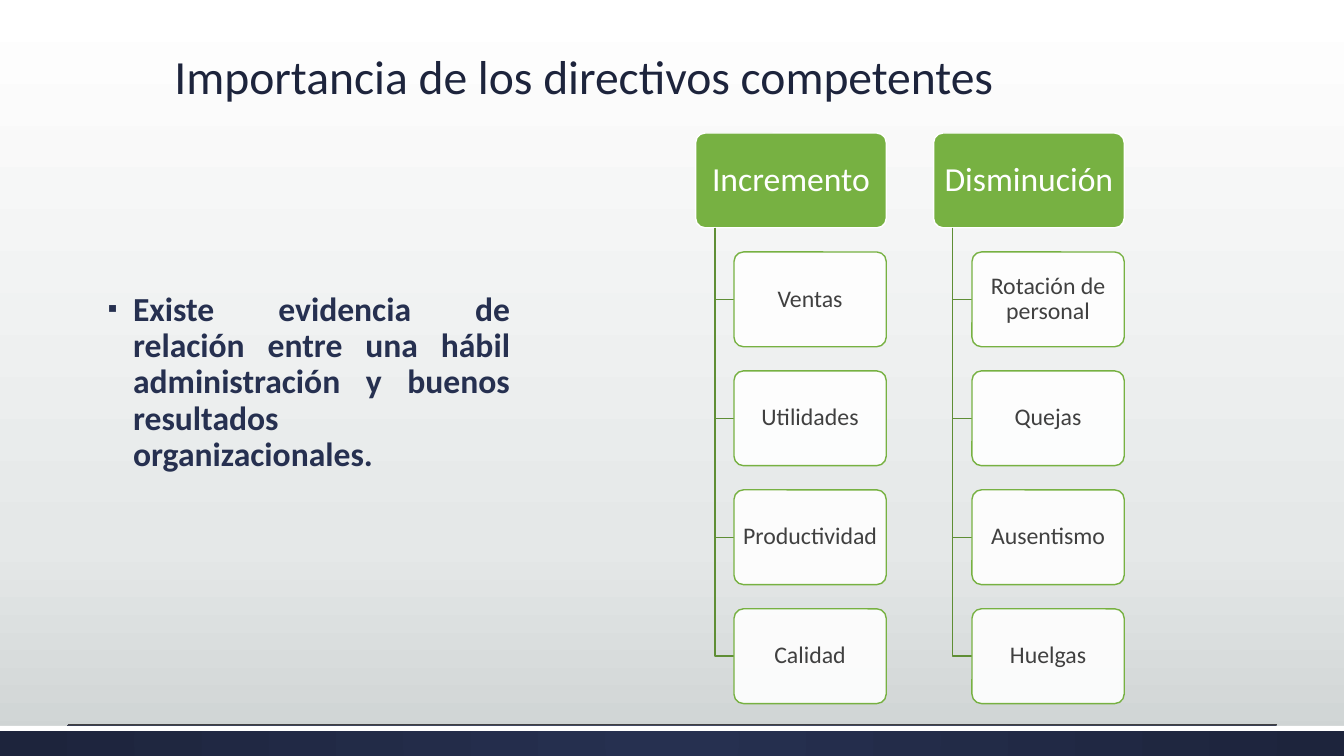
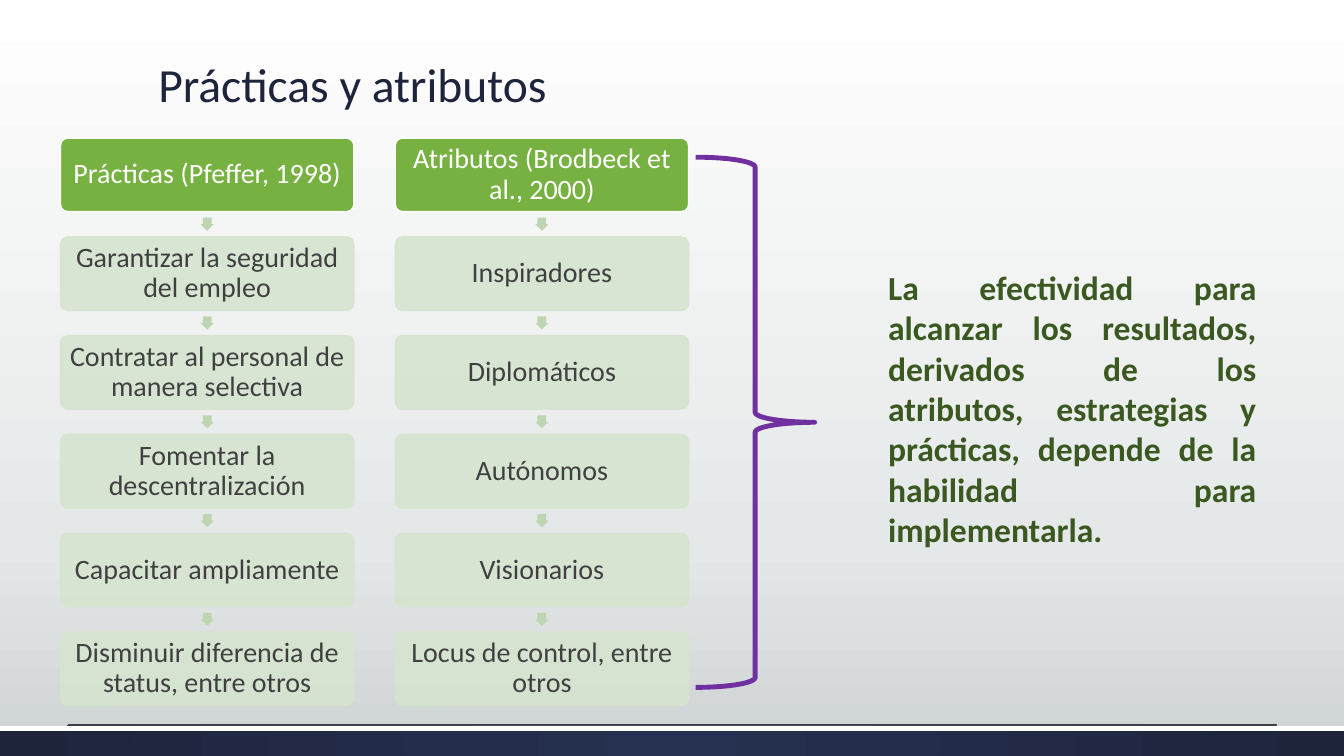
from lxml.etree import SubElement
from pptx import Presentation
from pptx.dml.color import RGBColor
from pptx.enum.shapes import MSO_CONNECTOR, MSO_SHAPE
from pptx.enum.text import MSO_ANCHOR, MSO_AUTO_SIZE, PP_ALIGN
from pptx.oxml.ns import qn
from pptx.util import Inches, Pt

WIDTH, HEIGHT = 13.33, 7.5
FONT = "Calibri"
NAVY, DEEP_NAVY, WHITE, GREY = "263050", "1D243C", "FFFFFF", "404040"
GREEN, STEM_GREEN, TEXT_GREEN = "77B142", "5F8E35", "3C5821"
PALE_GREEN, ARROW_GREEN, PURPLE = "D6E4CF", "BDD5B0", "7030A0"
BACKGROUND = [(0, WHITE), (72, "E5E8E8"), (100, "CDD2D2")]
FOOTER = [(0, NAVY), (100, DEEP_NAVY)]

IMPORTANCE = {
    "title": "Importancia de los directivos competentes",
    "body": "Existe evidencia de relación entre una hábil administración "
            "y buenos resultados organizacionales.",
    "columns": [
        ("Incremento", ["Ventas", "Utilidades", "Productividad", "Calidad"]),
        ("Disminución", ["Rotación de personal", "Quejas", "Ausentismo", "Huelgas"]),
    ],
}
PRACTICES = {
    "title": "Prácticas y atributos",
    "body": "La efectividad para alcanzar los resultados, derivados de los atributos, "
            "estrategias y prácticas, depende de la habilidad para implementarla.",
    "columns": [
        ("Prácticas (Pfeffer, 1998)",
         ["Garantizar la seguridad del empleo", "Contratar al personal de manera selectiva",
          "Fomentar la descentralización", "Capacitar ampliamente",
          "Disminuir diferencia de status, entre otros"]),
        ("Atributos (Brodbeck et al., 2000)",
         ["Inspiradores", "Diplomáticos", "Autónomos", "Visionarios",
          "Locus de control, entre otros"]),
    ],
}


def rgb(color):
    return RGBColor.from_string(color)


def place(sp, x, y, w, h):
    sp.left, sp.top, sp.width, sp.height = map(Inches, (x, y, w, h))


def write(sp, text, size=24, color=GREY, bold=False, align=PP_ALIGN.CENTER,
          anchor=MSO_ANCHOR.MIDDLE, spacing=0.9, inset=None):
    tf = sp.text_frame
    tf.word_wrap, tf.auto_size, tf.vertical_anchor = True, MSO_AUTO_SIZE.NONE, anchor
    if inset is not None:
        tf.margin_left = tf.margin_right = tf.margin_top = tf.margin_bottom = Inches(inset)
    p = tf.paragraphs[0]
    p.alignment, p.line_spacing = align, spacing
    r = p.add_run()
    r.text = text
    r.font.name, r.font.size, r.font.bold = FONT, Pt(size), bold
    r.font.color.rgb = rgb(color)
    return p


def paint(sp, fill=None, line=None, width=1):
    sp.shadow.inherit = False
    if fill:
        sp.fill.solid()
        sp.fill.fore_color.rgb = rgb(fill)
    else:
        sp.fill.background()
    if line:
        sp.line.color.rgb = rgb(line)
        sp.line.width = Pt(width)
    else:
        sp.line.fill.background()


def add_shape(s, kind, x, y, w, h, adjustments=(), **look):
    sp = s.shapes.add_shape(kind, *map(Inches, (x, y, w, h)))
    for i, value in enumerate(adjustments):
        sp.adjustments[i] = value
    paint(sp, **look)
    return sp


def add_card(s, text, x, y, w, h, size, color, inset, fill, line, faded=()):
    """Add a rounded card; faded lists the fills drawn at 90 % opacity."""
    sp = add_shape(s, MSO_SHAPE.ROUNDED_RECTANGLE, x, y, w, h, [0.1], fill=fill, line=line)
    for place_in_xml in faded:
        solid = sp.element.spPr.find("/".join(map(qn, place_in_xml)))
        SubElement(solid[0], qn("a:alpha"), val="90000")
    write(sp, text, size, color, inset=inset)


def set_gradient(owner, stops, radial=False):
    """Fill in the stops and direction of the gradient found in owner."""
    grad = next(owner.iter(qn("a:gradFill")))
    for child in list(grad):
        grad.remove(child)
    stop_list = SubElement(grad, qn("a:gsLst"))
    for pos, color in stops:
        stop = SubElement(stop_list, qn("a:gs"), pos=str(pos * 1000))
        SubElement(stop, qn("a:srgbClr"), val=color)
    if radial:
        way = SubElement(grad, qn("a:path"), path="circle")
        SubElement(way, qn("a:fillToRect"), l="50000", t="50000", r="50000", b="50000")
    else:
        SubElement(grad, qn("a:lin"), ang="5400000", scaled="0")


def dress_master(master, s):
    """Give the master its background and footer, drawn on s and moved over."""
    master.background.fill.gradient()
    set_gradient(master.element, BACKGROUND)
    band = add_shape(s, MSO_SHAPE.RECTANGLE, 0, 7.2, WIDTH, 0.3)
    band.fill.gradient()
    set_gradient(band.element, FOOTER, radial=True)
    strip = add_shape(s, MSO_SHAPE.RECTANGLE, 0, 7.2, WIDTH, 0.05, fill=WHITE)
    rule = s.shapes.add_connector(MSO_CONNECTOR.STRAIGHT, Inches(0.67), Inches(7.19),
                                  Inches(WIDTH * 0.95), Inches(7.19))
    rule.line.color.rgb, rule.line.width = rgb(GREY), Pt(0.75)
    SubElement(rule.element.spPr, qn("a:effectLst"))
    for number, sp in enumerate((band, strip, rule), 101):
        next(sp.element.iter(qn("p:cNvPr"))).set("id", str(number))
        master.shapes.element.append(sp.element)


def add_title(s, text, *box):
    place(s.shapes.title, *box)
    write(s.shapes.title, text, 34, DEEP_NAVY, align=PP_ALIGN.LEFT, anchor=MSO_ANCHOR.BOTTOM)


def add_bullet(p, char, color, percent):
    pPr = p._p.get_or_add_pPr()
    pPr.set("marL", str(Inches(0.3)))
    pPr.set("indent", str(Inches(-0.25)))
    SubElement(SubElement(pPr, qn("a:buClr")), qn("a:srgbClr"), val=color)
    SubElement(pPr, qn("a:buSzPct"), val=str(percent * 1000))
    SubElement(pPr, qn("a:buFont"), typeface=FONT)
    SubElement(pPr, qn("a:buChar"), char=char)


def add_elbow(s, x, top, bottom, reach):
    x, top, bottom, end = map(Inches, (x, top, bottom, x + reach))
    path = s.shapes.build_freeform(x, top)
    path.add_line_segments([(x, bottom), (end, bottom)], close=False)
    paint(path.convert_to_shape(), line=STEM_GREEN)


def build_importance(s):
    add_title(s, IMPORTANCE["title"], 1.63, 0.24, 11.55, 0.85)
    body = s.placeholders[1]
    place(body, 0.92, 2.85, 4.24, 3.91)
    p = write(body, IMPORTANCE["body"], color=NAVY, bold=True,
              align=PP_ALIGN.JUSTIFY, anchor=MSO_ANCHOR.TOP)
    p.space_before = Pt(18)
    add_bullet(p, "▪", NAVY, 80)

    left, top, w, h, col_step, row_step, stem = 6.9, 1.32, 1.89, 0.94, 2.36, 1.18, 0.19
    for col, (head, items) in enumerate(IMPORTANCE["columns"]):
        x = left + col * col_step
        add_card(s, head, x, top, w, h, 24, WHITE, 0.05, GREEN, WHITE)
        for row, item in enumerate(items, 1):
            y = top + row * row_step
            add_elbow(s, x + stem, top + h, y + h / 2, stem)
            add_card(s, item, x + 2 * stem, y, w - 2 * stem, h, 17, GREY, 0.04,
                     WHITE, GREEN, [("a:solidFill",)])


def build_practices(s):
    add_title(s, PRACTICES["title"], 1.47, 0.51, 9.3, 0.66)
    left, top, w, h, col_step, row_step, arrow = 0.6, 1.37, 2.91, 0.73, 3.32, 0.98, 0.13
    for col, (head, items) in enumerate(PRACTICES["columns"]):
        x = left + col * col_step
        add_card(s, head, x, top, w, h, 20, WHITE, 0.03, GREEN, WHITE)
        for row, item in enumerate(items, 1):
            y = top + row * row_step
            add_shape(s, MSO_SHAPE.DOWN_ARROW, x + (w - arrow) / 2,
                      y - (row_step - h + arrow) / 2, arrow, arrow, [0.67, 0.5],
                      fill=ARROW_GREEN)
            add_card(s, item, x, y, w, h, 20, GREY, 0.03, PALE_GREEN, PALE_GREEN,
                     [("a:solidFill",), ("a:ln", "a:solidFill")])
    add_shape(s, MSO_SHAPE.RIGHT_BRACE, 6.9, 1.56, 1.18, 5.26, line=PURPLE, width=3.5)
    box = s.shapes.add_textbox(*map(Inches, (8.71, 2.6, 3.85, 2.93)))
    write(box, PRACTICES["body"], color=TEXT_GREEN, bold=True, align=PP_ALIGN.JUSTIFY,
          anchor=MSO_ANCHOR.TOP, spacing=1.0)


def main():
    prs = Presentation()
    prs.slide_width, prs.slide_height = Inches(WIDTH), Inches(HEIGHT)
    title_and_content, title_only = prs.slide_layouts[1], prs.slide_layouts[5]
    s = prs.slides.add_slide(title_and_content)
    dress_master(prs.slide_master, s)
    build_importance(s)
    build_practices(prs.slides.add_slide(title_only))
    prs.save("out.pptx")


if __name__ == "__main__":
    main()
